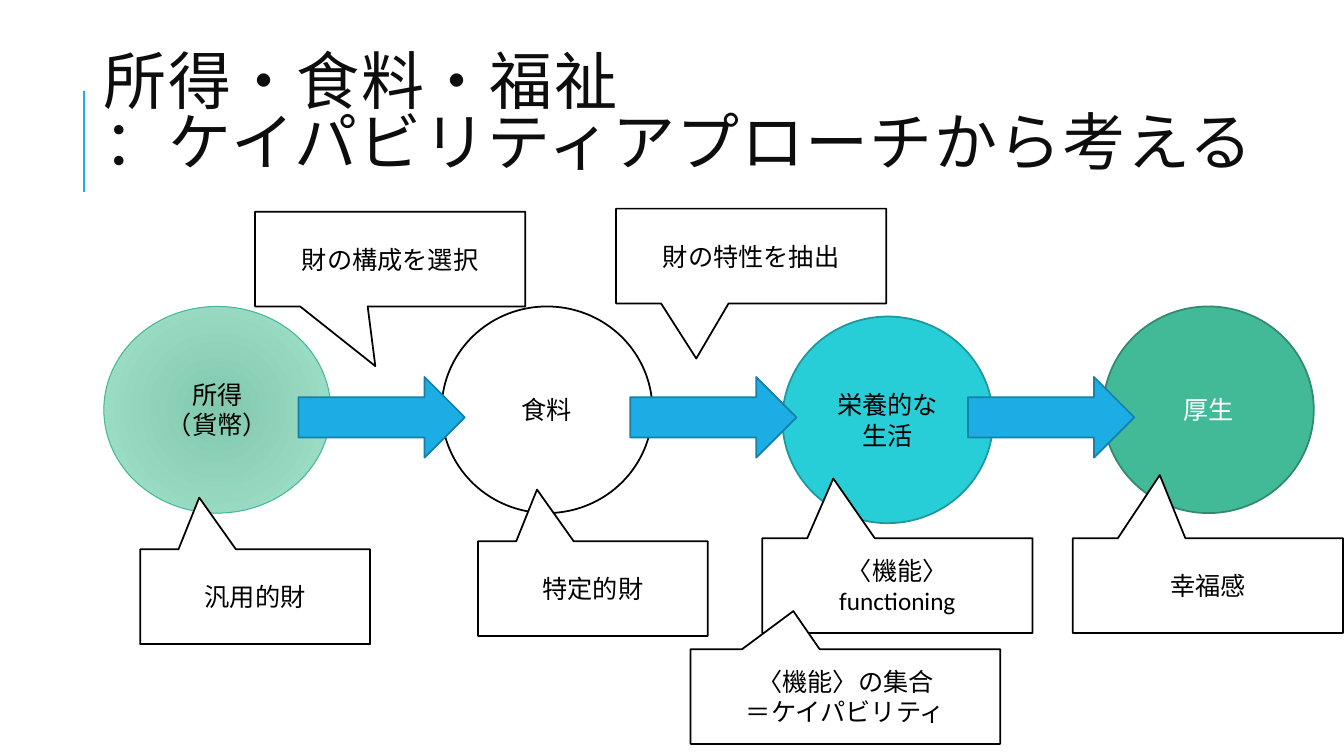
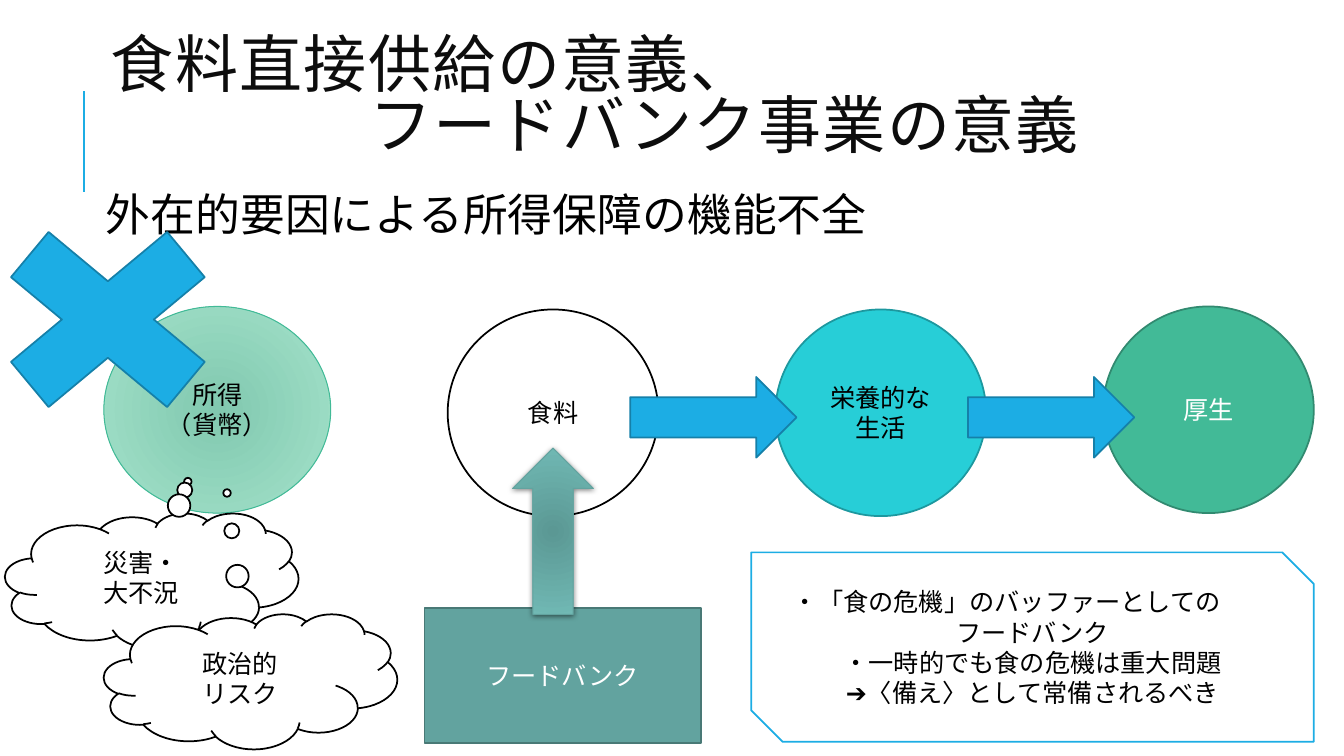
import dataclasses
import typing

import lxml.etree
import pptx
import pptx.dml.color
import pptx.enum.dml
import pptx.enum.shapes
import pptx.enum.text
import pptx.oxml.ns
import pptx.util

PX = 9144
FONT = "Calibri"
KIND = pptx.enum.shapes.MSO_SHAPE
ALIGN = pptx.enum.text.PP_ALIGN
HUES = {
    "white": "FFFFFF",
    "black": "000000",
    "title": "0D0D0D",
    "blue": "1CADE4",
    "navy": "1580A9",
    "mint": "81C8AF",
    "pale": "A4E3CB",
    "green": "42BA97",
    "moss": "318A70",
    "cyan": "27CED7",
    "teal": "1D989F",
    "sage": "62A39F",
    "pine": "497976",
    "slate": "5B9894",
    "mist": "72BBB6",
}


@dataclasses.dataclass(frozen=True)
class Skin:
    fill: str
    line: str
    ink: str = "black"
    edge: str = ""
    width: float = 1.25
    shade: bool = False


PLAIN = Skin("white", "black")
BLUE = Skin("blue", "navy")
CYAN = Skin("cyan", "teal")
GREEN = Skin("green", "moss", "white")
MINT = Skin("mint", "green", edge="pale", width=0.75)
SAGE = Skin("sage", "pine", "white")
RISE = Skin("slate", "sage", edge="mist", width=0.75, shade=True)
FRAME = Skin("white", "blue")


@dataclasses.dataclass(frozen=True)
class Item:
    kind: typing.Any
    x: int
    y: int
    w: int
    h: int
    text: str = ""
    skin: Skin = PLAIN
    bend: tuple[float, ...] = ()
    turn: int = 0
    dents: dict[int, int] = dataclasses.field(default_factory=dict)


def px(size: int) -> int:
    return pptx.util.Emu(size * PX)


def hue(name: str) -> pptx.dml.color.RGBColor:
    return pptx.dml.color.RGBColor.from_string(HUES[name])


def add(node: typing.Any, tag: str, **vals: typing.Any) -> typing.Any:
    part = lxml.etree.SubElement(node, pptx.oxml.ns.qn(tag))
    for key, val in vals.items():
        part.set(key, str(val))
    return part


def write(frame: typing.Any, text: str, *, size: int = 18, ink: str = "black",
          align: typing.Any = ALIGN.CENTER, lead: float = 1.0, above: int = 0,
          below: int = 0, track: int = 0,
          dents: dict[int, int] | None = None) -> None:
    frame.word_wrap = True
    frame.auto_size = pptx.enum.text.MSO_AUTO_SIZE.NONE
    for row, words in enumerate(text.split("\n")):
        para = frame.add_paragraph() if row else frame.paragraphs[0]
        dent = (dents or {}).get(row, 0)
        para.alignment = ALIGN.LEFT if dent else align
        para.line_spacing = lead
        para.space_before = pptx.util.Pt(above)
        para.space_after = pptx.util.Pt(below)
        props = para._p.get_or_add_pPr()
        props.set("marL", str(px(dent)))
        props.set("indent", "0")
        add(props, "a:buNone")
        run = para.add_run()
        run.text = words
        run.font.name = FONT
        run.font.size = pptx.util.Pt(size)
        run.font.color.rgb = hue(ink)
        if track:
            run._r.get_or_add_rPr().set("spc", str(track * 100))


def paint(shape: typing.Any, skin: Skin) -> None:
    if skin.edge:
        shape.fill.gradient()
        stops = shape.fill.gradient_stops
        for stop, name, spot in zip(stops, (skin.fill, skin.edge), (0, 1)):
            stop.color.rgb = hue(name)
            stop.position = spot
        grad = shape._element.spPr.find(pptx.oxml.ns.qn("a:gradFill"))
        grad.remove(grad.find(pptx.oxml.ns.qn("a:lin")))
        ring = add(grad, "a:path", path="circle")
        add(ring, "a:fillToRect", l=100000, t=100000, r=100000, b=100000)
    else:
        shape.fill.solid()
        shape.fill.fore_color.rgb = hue(skin.fill)
    shape.line.color.rgb = hue(skin.line)
    shape.line.width = pptx.util.Pt(skin.width)
    shape.shadow.inherit = False
    if skin.shade:
        glow = shape._element.spPr.find(pptx.oxml.ns.qn("a:effectLst"))
        cast = add(glow, "a:outerShdw", blurRad=50800, dist=12700,
                   dir=5400000, rotWithShape=0)
        tint = add(cast, "a:srgbClr", val=HUES["black"])
        add(tint, "a:alpha", val=50000)


def draw(slide: typing.Any, item: Item) -> None:
    shape = slide.shapes.add_shape(
        item.kind, *map(px, (item.x, item.y, item.w, item.h)))
    shape.rotation = item.turn
    for spot, val in enumerate(item.bend):
        shape.adjustments[spot] = val
    paint(shape, item.skin)
    if item.text:
        write(shape.text_frame, item.text, ink=item.skin.ink,
              dents=item.dents)


def place(shape: typing.Any, box: tuple[int, int, int, int]) -> None:
    shape.left, shape.top, shape.width, shape.height = map(px, box)


def start(deck: typing.Any, form: int, text: str,
          box: tuple[int, int, int, int],
          dents: dict[int, int] | None = None) -> typing.Any:
    slide = deck.slides.add_slide(deck.slide_layouts[form])
    rule = slide.shapes.add_connector(
        pptx.enum.shapes.MSO_CONNECTOR.STRAIGHT,
        px(83), px(190), px(83), px(90))
    rule.line.color.rgb = hue("blue")
    rule.line.width = pptx.util.Pt(1.5)
    add(rule._element.spPr, "a:effectLst")
    title = slide.shapes.title
    place(title, box)
    title.text_frame.vertical_anchor = pptx.enum.text.MSO_ANCHOR.MIDDLE
    write(title.text_frame, text, size=45, ink="title", align=ALIGN.LEFT,
          lead=0.8, track=1, dents=dents)
    return slide


def disc(x: int, y: int, text: str, skin: Skin, w: int = 209) -> Item:
    return Item(KIND.OVAL, x, y, w, 205, text, skin)


def arrow(x: int, y: int = 374, skin: Skin = BLUE, turn: int = 0) -> Item:
    return Item(KIND.RIGHT_ARROW, x, y, 165, 80, skin=skin, turn=turn)


def call(x: int, y: int, w: int, text: str, *bend: float) -> Item:
    return Item(KIND.RECTANGULAR_CALLOUT, x, y, w, 94, text, bend=bend)


def cloud(x: int, y: int, text: str, *bend: float) -> Item:
    return Item(KIND.CLOUD_CALLOUT, x, y, 291, 134, text, bend=bend)


MONEY = disc(103, 304, "所得\n（貨幣）", MINT, 225)
GOOD = disc(1094, 304, "厚生", GREEN)
FOOD = "食料"
LIFE = "栄養的な\n生活"

FLOW = [
    MONEY,
    disc(438, 304, FOOD, PLAIN),
    disc(776, 314, LIFE, CYAN),
    arrow(296),
    arrow(625),
    GOOD,
    arrow(960),
    call(139, 545, 228, "汎用的財", -0.243, -1.046),
    call(474, 537, 228, "特定的財", -0.243, -1.046),
    call(611, 207, 268, "財の特性を抽出", -0.203, 1.082),
    call(253, 210, 268, "財の構成を選択", -0.055, 1.13),
    call(756, 534, 268, "〈機能〉\nfunctioning", -0.237, -1.131),
    call(1064, 534, 268, "幸福感", -0.178, -1.167),
    call(685, 644, 307, "〈機能〉の集合\n＝ケイパビリティ", -0.168, -0.902),
]

NOTE = ("・「食の危機」のバッファーとしての\nフードバンク\n"
        "・一時的でも食の危機は重大問題\n➔〈備え〉として常備されるべき")

BANK = [
    MONEY,
    disc(444, 307, FOOD, PLAIN),
    disc(769, 307, LIFE, CYAN),
    arrow(625),
    GOOD,
    arrow(960),
    cloud(5, 509, "災害・\n大不況", 0.123, -0.733),
    Item(KIND.MATH_MULTIPLY, -42, 193, 298, 248, skin=BLUE),
    cloud(103, 609, "政治的\nリスク", -0.08, -1.395),
    Item(KIND.RECTANGLE, 421, 603, 274, 134, "フードバンク", SAGE),
    arrow(466, 487, RISE, 270),
    Item(KIND.SNIP_2_DIAG_RECTANGLE, 745, 548, 558, 188, NOTE, FRAME,
         dents={0: 16}),
]


def main() -> None:
    deck = pptx.Presentation()
    deck.slide_width, deck.slide_height = px(1333), px(750)

    slide = start(deck, 5, "所得・食料・福祉\n：ケイパビリティアプローチから考える",
                  (93, 34, 1209, 164))
    for item in FLOW:
        draw(slide, item)

    slide = start(deck, 1, "食料直接供給の意義、\nフードバンク事業の意義",
                  (100, 37, 1134, 124), {1: 256})
    body = slide.placeholders[1]
    place(body, (100, 186, 1165, 489))
    frame = body.text_frame
    frame.margin_left = frame.margin_right = px(5)
    frame.margin_top = frame.margin_bottom = px(5)
    write(frame, "外在的要因による所得保障の機能不全", size=32,
          align=ALIGN.LEFT, lead=0.9, above=12, below=2)
    for item in BANK:
        draw(slide, item)

    deck.save("out.pptx")


if __name__ == "__main__":
    main()
